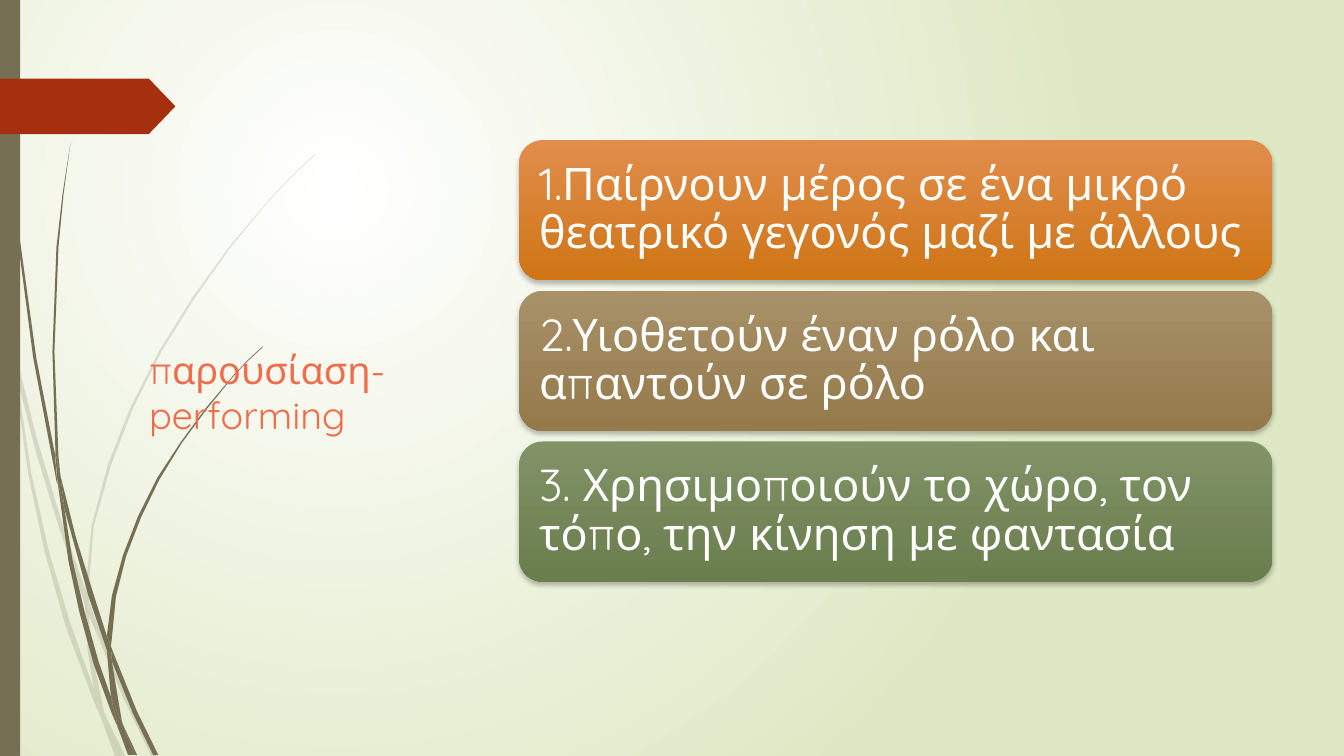
from lxml import etree
from pptx import Presentation
from pptx.dml.color import RGBColor
from pptx.enum.shapes import MSO_SHAPE
from pptx.enum.text import MSO_ANCHOR, PP_ALIGN
from pptx.oxml.ns import qn
from pptx.util import Inches, Pt

RECT, CARD, RIBBON = MSO_SHAPE.RECTANGLE, MSO_SHAPE.ROUNDED_RECTANGLE, MSO_SHAPE.PENTAGON
TOP, MIDDLE, LEFT = MSO_ANCHOR.TOP, MSO_ANCHOR.MIDDLE, PP_ALIGN.LEFT
WIDTH, HEIGHT = 13.33, 7.5
FONT = "Quicksand"
HUNDREDTH = Inches(0.01)
COLORS = {
    "white": "FFFFFF", "mist": "DFE8C4", "bark": "766F54", "ribbon": "A53010",
    "title": "EE6E4B", "shadow": "000000",
}

CARD_LEFT, CARD_TOP, CARD_WIDTH, CARD_HEIGHT, CARD_PITCH = 5.15, 1.39, 7.47, 1.39, 1.495
CARDS = [
    ("1.Παίρνουν μέρος σε ένα μικρό θεατρικό γεγονός μαζί με άλλους", "E18D4C", "CF7516"),
    ("2.Υιοθετούν έναν ρόλο και απαντούν σε ρόλο", "A89068", "947A4B"),
    ("3. Χρησιμοποιούν το χώρο, τον τόπο, την κίνηση με φαντασία", "819367", "6A7D4D"),
]

# Outlines of the grass blades, in hundredths of an inch
PALE_GRASS = [
    [(11, 350), (9, 322), (0, 282), (0, 299), (10, 344)],
    [(58, 522), (84, 599), (85, 586), (62, 520), (36, 433), (14, 345), (17, 376), (36, 450)],
    [(92, 607), (88, 596), (88, 610), (123, 694), (150, 750), (155, 750), (127, 692)],
    [(119, 750), (124, 750), (105, 711)],
    [(93, 683), (70, 619), (48, 545), (31, 469), (17, 376), (11, 350), (28, 470),
     (44, 546), (65, 621), (92, 693), (101, 714), (99, 707)],
    [(84, 599), (87, 646), (93, 683), (96, 692), (105, 711), (103, 706), (91, 646),
     (88, 610), (88, 608)],
    [(88, 584), (93, 522), (110, 462), (132, 405), (160, 349), (193, 296), (229, 245),
     (268, 198), (290, 175), (312, 154), (312, 153), (289, 175), (268, 197), (228, 244),
     (191, 295), (158, 348), (130, 403), (107, 461), (91, 521), (85, 584), (85, 586),
     (88, 596)],
    [(101, 714), (114, 750), (119, 750)],
    [(88, 608), (88, 610), (88, 596), (85, 586), (84, 599)],
    [(96, 692), (93, 683), (99, 707), (101, 714), (119, 750), (105, 711)],
]
DARK_GRASS = [
    [(7, 110), (17, 233), (33, 355), (56, 477), (57, 481), (55, 457), (55, 453),
     (36, 355), (19, 232), (8, 109), (5, 48), (4, 0), (3, 0), (4, 48)],
    [(88, 592), (106, 645), (106, 633), (106, 631), (93, 590), (75, 532), (60, 472),
     (64, 505)],
    [(113, 649), (110, 641), (111, 656), (132, 708), (152, 749), (157, 749), (136, 706)],
    [(110, 691), (98, 657), (84, 607), (72, 556), (64, 505), (57, 477), (68, 557),
     (79, 608), (93, 659), (111, 708), (117, 722), (116, 717)],
    [(60, 472), (58, 453), (54, 349), (58, 245), (63, 193), (70, 141), (62, 193),
     (56, 245), (52, 349), (55, 449)],
    [(133, 749), (136, 749), (122, 719)],
    [(57, 477), (64, 505), (60, 472), (55, 449), (55, 453)],
    [(111, 633), (115, 592), (125, 552), (140, 513), (158, 476), (180, 440), (205, 406),
     (231, 374), (245, 359), (261, 344), (260, 344), (245, 358), (231, 373), (204, 405),
     (179, 439), (156, 474), (137, 512), (122, 551), (111, 591), (106, 631), (110, 641)],
    [(117, 722), (127, 749), (131, 749)],
    [(106, 645), (110, 691), (116, 706), (122, 719), (121, 716), (111, 656), (109, 651)],
    [(106, 645), (109, 651), (111, 656), (110, 641), (106, 631), (106, 633)],
    [(116, 706), (110, 691), (116, 717), (117, 722), (130, 749), (133, 749), (122, 719)],
]


def rgb(name):
    return RGBColor.from_string(COLORS.get(name, name))


def set_gradient(fill, first, last):
    fill.gradient()
    for stop, color in zip(fill.gradient_stops, (first, last)):
        stop.color.rgb = rgb(color)


def paint_background(slide):
    """Radial gradient whose centre lies a quarter in from the top left."""
    set_gradient(slide.background.fill, "white", "mist")
    grad = slide.element.find(".//" + qn("a:gradFill"))
    grad.remove(grad.find(qn("a:lin")))
    circle = etree.SubElement(grad, qn("a:path"), {"path": "circle"})
    etree.SubElement(circle, qn("a:fillToRect"),
                     {"l": "50000", "t": "50000", "r": "100000", "b": "100000"})


def make_plain(sp, color=None):
    """Remove line and shadow; fill with one colour if given."""
    sp.shadow.inherit = False
    sp.line.fill.background()
    if color:
        sp.fill.solid()
        sp.fill.fore_color.rgb = rgb(color)


def add_shape(slide, kind, left, top, width, height, color=None):
    sp = slide.shapes.add_shape(kind, Inches(left), Inches(top), Inches(width), Inches(height))
    make_plain(sp, color)
    return sp


def add_alpha(color_element, percent):
    etree.SubElement(color_element, qn("a:alpha"), {"val": str(percent * 1000)})


def add_grass(slide, blades, opacity=100):
    group = slide.shapes.add_group_shape()
    for start, *rest in blades:
        builder = group.shapes.build_freeform(*start, scale=HUNDREDTH)
        builder.add_line_segments(rest, close=True)
        sp = builder.convert_to_shape()
        make_plain(sp, "bark")
        if opacity < 100:
            add_alpha(sp.element.spPr.find(".//" + qn("a:srgbClr")), opacity)


def add_soft_shadow(sp):
    effects = sp.element.spPr.find(qn("a:effectLst"))
    shadow = etree.SubElement(effects, qn("a:outerShdw"), {
        "blurRad": str(Pt(3)), "dist": str(Pt(2)), "dir": "5400000", "rotWithShape": "0"})
    add_alpha(etree.SubElement(shadow, qn("a:srgbClr"), {"val": COLORS["shadow"]}), 25)


def write_text(sp, text, size, color, anchor=TOP, inset=None, spacing=None):
    tf = sp.text_frame
    tf.word_wrap = True
    tf.vertical_anchor = anchor
    if inset is not None:
        tf.margin_left = tf.margin_right = tf.margin_top = tf.margin_bottom = Inches(inset)
    p = tf.paragraphs[0]
    p.alignment = LEFT
    p.line_spacing = spacing
    r = p.add_run()
    r.text = text
    r.font.name, r.font.size = FONT, Pt(size)
    r.font.color.rgb = rgb(color)


def add_card(slide, row, text, light, dark):
    sp = add_shape(slide, CARD, CARD_LEFT, CARD_TOP + row * CARD_PITCH, CARD_WIDTH, CARD_HEIGHT)
    set_gradient(sp.fill, light, dark)
    sp.fill.gradient_angle = 270
    add_soft_shadow(sp)
    write_text(sp, text, size=32, color="white", anchor=MIDDLE, inset=0.13, spacing=0.9)


def main():
    prs = Presentation()
    prs.slide_width, prs.slide_height = Inches(WIDTH), Inches(HEIGHT)
    slide = prs.slides.add_slide(prs.slide_layouts[6])
    paint_background(slide)
    add_grass(slide, PALE_GRASS, opacity=20)
    add_grass(slide, DARK_GRASS)
    add_shape(slide, RECT, 0, 0, 0.2, HEIGHT, "bark")
    ribbon = add_shape(slide, RIBBON, 0, 0.78, 1.74, 0.55, "ribbon")
    ribbon.adjustments[0] = 0.48
    title = slide.shapes.add_textbox(Inches(1.38), Inches(3.39), Inches(2.68), Inches(3.31))
    write_text(title, "παρουσίαση- performing", size=27, color="title")
    for row, card in enumerate(CARDS):
        add_card(slide, row, *card)
    prs.save("out.pptx")


if __name__ == "__main__":
    main()
